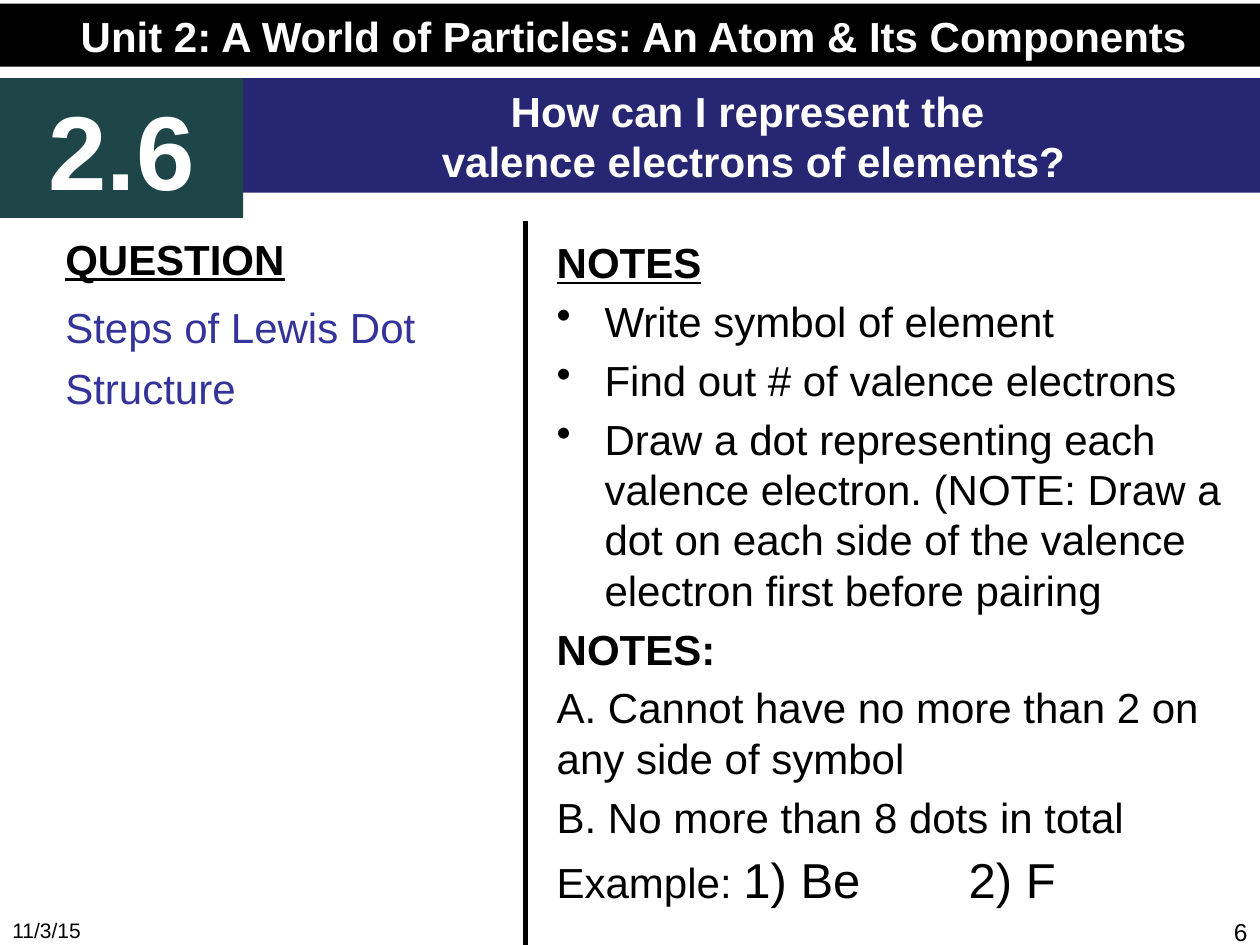
from dataclasses import dataclass

from lxml import etree
from pptx import Presentation
from pptx.dml.color import RGBColor
from pptx.enum.shapes import MSO_CONNECTOR, MSO_SHAPE
from pptx.enum.text import MSO_ANCHOR, MSO_AUTO_SIZE, PP_ALIGN
from pptx.oxml.ns import qn
from pptx.util import Inches, Pt


@dataclass(frozen=True)
class Theme:
    font: str = "Arial"
    black: RGBColor = RGBColor(0x00, 0x00, 0x00)
    white: RGBColor = RGBColor(0xFF, 0xFF, 0xFF)
    teal: RGBColor = RGBColor(0x1E, 0x46, 0x49)
    navy: RGBColor = RGBColor(0x26, 0x26, 0x73)
    blue: RGBColor = RGBColor(0x33, 0x33, 0x99)
    date: Pt = Pt(12)
    number: Pt = Pt(14)
    body: Pt = Pt(24)
    example: Pt = Pt(28)
    lesson: Pt = Pt(60)
    gap: Pt = Pt(4.8)


theme = Theme()


def style(paragraph, size, color, bold=False, underline=False, align=PP_ALIGN.LEFT):
    paragraph.alignment = align
    font = paragraph.font
    font.name, font.size, font.bold, font.underline = theme.font, size, bold, underline
    font.color.rgb = color


def add_text_frame(slide, left, top, width, height):
    box = slide.shapes.add_textbox(Inches(left), Inches(top), Inches(width), Inches(height))
    box.text_frame.word_wrap = True
    return box.text_frame


presentation = Presentation()
presentation.slide_width, presentation.slide_height = Inches(10), Inches(7.5)
slide = presentation.slides.add_slide(presentation.slide_layouts[5])

footers = [
    (0, "11/3/15", theme.date, PP_ALIGN.LEFT),
    (7.67, "6", theme.number, PP_ALIGN.RIGHT),
]
for left, text, size, align in footers:
    paragraph = add_text_frame(slide, left, 7.23, 2.33, 0.27).paragraphs[0]
    paragraph.text = text
    style(paragraph, size, theme.black, align=align)

unit = slide.shapes.add_shape(MSO_SHAPE.RECTANGLE, 0, 0, 0, 0)
lesson = slide.shapes.add_shape(MSO_SHAPE.RECTANGLE, 0, 0, 0, 0)
banners = [
    (unit, (0, 0.03, 10.06, 0.5), theme.black, theme.body,
     "Unit 2: A World of Particles: An Atom & Its Components"),
    (lesson, (0, 0.62, 1.93, 1.11), theme.teal, theme.lesson, "2.6"),
    (slide.shapes.title, (1.93, 0.62, 8.1, 0.91), theme.navy, theme.body,
     "How can I represent the \nvalence electrons of elements?"),
]
for shape, bounds, fill, size, text in banners:
    shape.left, shape.top, shape.width, shape.height = map(Inches, bounds)
    shape.fill.solid()
    shape.fill.fore_color.rgb = fill
    shape.line.fill.background()
    shape.shadow.inherit = False
    frame = shape.text_frame
    frame.text = text
    frame.word_wrap = True
    frame.auto_size = MSO_AUTO_SIZE.NONE
    frame.vertical_anchor = MSO_ANCHOR.MIDDLE
    for paragraph in frame.paragraphs:
        style(paragraph, size, theme.white, bold=True, align=PP_ALIGN.CENTER)

divider = slide.shapes.add_connector(
    MSO_CONNECTOR.STRAIGHT, Inches(4.17), Inches(1.75), Inches(4.17), Inches(7.5))
divider.line.color.rgb = theme.black
divider.line.width = Pt(3)
etree.SubElement(divider._element.spPr, qn("a:effectLst"))

question_frame = add_text_frame(slide, 0.42, 1.8, 3.67, 4.95)
heading = question_frame.paragraphs[0]
heading.text = "QUESTION"
style(heading, theme.body, theme.black, bold=True, underline=True)
topic = question_frame.add_paragraph()
topic.text = "Steps of Lewis Dot Structure"
topic.line_spacing = 1.2
topic.space_before = theme.gap
style(topic, theme.body, theme.blue)

notes_frame = add_text_frame(slide, 4.32, 1.83, 5.67, 4.95)
heading = notes_frame.paragraphs[0]
heading.text = "NOTES"
style(heading, theme.body, theme.black, bold=True, underline=True)
notes = [
    ("Write symbol of element", "bullet"),
    ("Find out # of valence electrons", "bullet"),
    ("Draw a dot representing each valence electron. (NOTE: Draw a dot on each side "
     "of the valence electron first before pairing", "bullet"),
    ("NOTES:", "bold"),
    ("A. Cannot have no more than 2 on any side of symbol", "plain"),
    ("B. No more than 8 dots in total", "plain"),
]
for text, kind in notes:
    paragraph = notes_frame.add_paragraph()
    paragraph.text = text
    paragraph.space_before = theme.gap
    if kind == "bullet":
        properties = paragraph._p.get_or_add_pPr()
        properties.set("marL", str(Inches(0.38)))
        properties.set("indent", str(-Inches(0.38)))
        etree.SubElement(properties, qn("a:buChar"), char="•")
    style(paragraph, theme.body, theme.black, bold=kind == "bold")

example = notes_frame.add_paragraph()
example.space_before = theme.gap
tabs = etree.SubElement(example._p.get_or_add_pPr(), qn("a:tabLst"))
etree.SubElement(tabs, qn("a:tab"), pos=str(Inches(3.27)), algn="l")
style(example, theme.body, theme.black)
example.add_run().text = "Example: "
elements = example.add_run()
elements.text = "1) Be\t2) F"
elements.font.size = theme.example

presentation.save("out.pptx")
